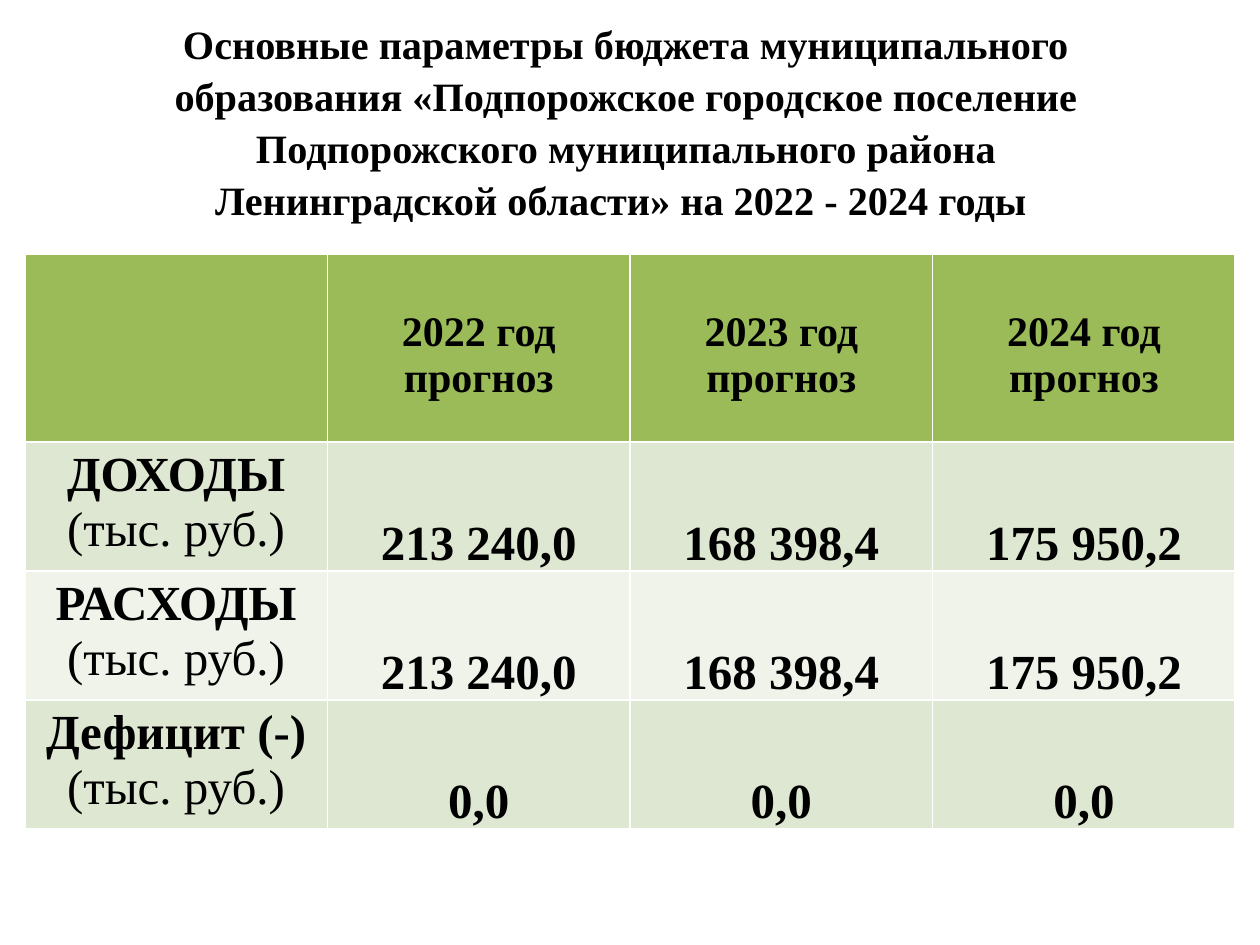
"""Builds the slide with the main budget figures for 2022 - 2024."""
from pptx import Presentation
from pptx.dml.color import RGBColor
from pptx.enum.text import MSO_ANCHOR, MSO_AUTO_SIZE, PP_ALIGN
from pptx.util import Cm, Pt

CENTER = PP_ALIGN.CENTER
TOP, MIDDLE, BOTTOM = MSO_ANCHOR.TOP, MSO_ANCHOR.MIDDLE, MSO_ANCHOR.BOTTOM
NO_AUTOFIT = MSO_AUTO_SIZE.NONE
TITLE_ONLY = 5

TITLE = (
    "Основные параметры бюджета муниципального образования "
    "«Подпорожское городское поселение Подпорожского муниципального района "
    "Ленинградской области» на 2022 - 2024 годы "
)
YEARS = ["2022 год прогноз", "2023 год прогноз", "2024 год прогноз"]
UNIT = "(тыс. руб.)"
BUDGET = [
    ("ДОХОДЫ", ["213 240,0", "168 398,4", "175 950,2"]),
    ("РАСХОДЫ", ["213 240,0", "168 398,4", "175 950,2"]),
    ("Дефицит (-)", ["0,0", "0,0", "0,0"]),
]


def color(value):
    return RGBColor.from_string(value)


class BudgetPage:
    font = "Times New Roman"
    ink = "000000"
    header_fill = "9BBB59"
    band_fills = ["DEE7D1", "EFF3EA"]
    title_size, header_size, body_size = 23, 24, 28

    def __init__(self, deck):
        self.page = deck.slides.add_slide(deck.slide_layouts[TITLE_ONLY])

    def style(self, para, size, bold=True):
        para.alignment = CENTER
        for span in para.runs:
            span.font.name = self.font
            span.font.size = Pt(size)
            span.font.bold = bold
            span.font.color.rgb = color(self.ink)

    def title(self, text, left, top, width, height):
        box = self.page.shapes.title
        box.left, box.top, box.width, box.height = map(Cm, (left, top, width, height))
        frame = box.text_frame
        frame.text = text
        frame.word_wrap = True
        frame.auto_size = NO_AUTOFIT
        frame.vertical_anchor = MIDDLE
        para = frame.paragraphs[0]
        para.line_spacing = 1.08
        self.style(para, self.title_size)

    def cell(self, cell, text, fill, size, anchor):
        cell.fill.solid()
        cell.fill.fore_color.rgb = color(fill)
        cell.vertical_anchor = anchor
        cell.text_frame.text = text
        for para in cell.text_frame.paragraphs:
            self.style(para, size, bold=para.text != UNIT)

    def table(self, years, budget, left, top, column_width, row_heights):
        rows, columns = len(budget) + 1, len(years) + 1
        frame = self.page.shapes.add_table(
            rows, columns, Cm(left), Cm(top),
            Cm(column_width * columns), Cm(sum(row_heights)))
        table = frame.table
        for column in table.columns:
            column.width = Cm(column_width)
        for row, height in zip(table.rows, row_heights):
            row.height = Cm(height)

        for index, text in enumerate([""] + years):
            cell = table.cell(0, index)
            self.cell(cell, text, self.header_fill, self.header_size, MIDDLE)
            cell.margin_top = Cm(0.4)

        for row, (name, values) in enumerate(budget, start=1):
            fill = self.band_fills[(row - 1) % 2]
            self.cell(table.cell(row, 0), f"{name}\n{UNIT}", fill, self.body_size, TOP)
            for index, value in enumerate(values, start=1):
                cell = table.cell(row, index)
                self.cell(cell, value, fill, self.body_size, BOTTOM)
                cell.margin_left = cell.margin_right = cell.margin_top = Cm(0.03)
                cell.margin_bottom = 0


def main():
    deck = Presentation()
    deck.slide_width, deck.slide_height = Cm(25.4), Cm(19.05)
    page = BudgetPage(deck)
    page.title(TITLE, 2.1, 0.91, 21.06, 3)
    page.table(YEARS, BUDGET, 0.5, 5.13, 6.1, [3.78, 2.6, 2.6, 2.6])
    deck.save("out.pptx")


if __name__ == "__main__":
    main()
